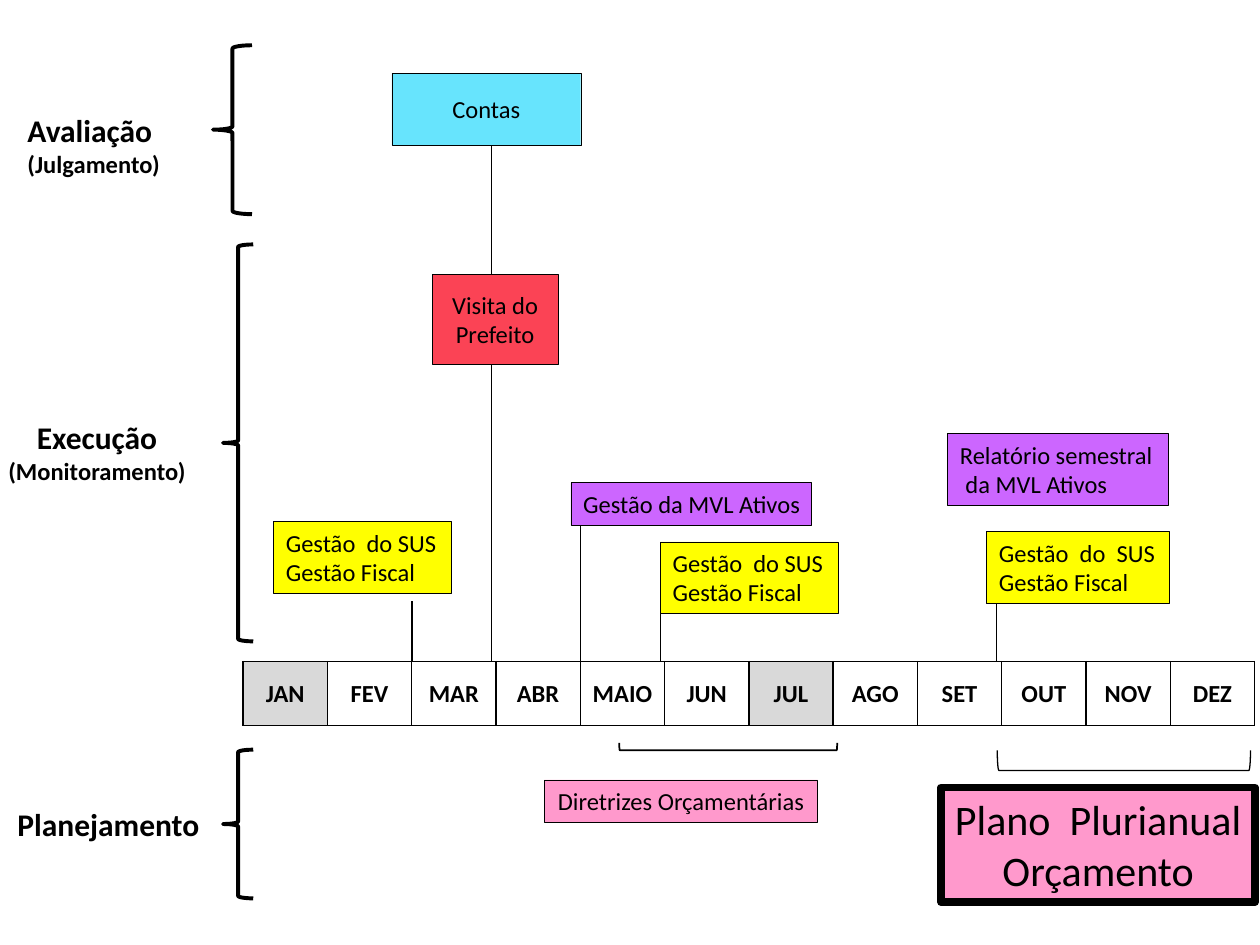
"""Build the yearly oversight calendar slide."""
from dataclasses import dataclass
from typing import Any

from lxml import etree
from pptx import Presentation, util as u
from pptx.dml.color import RGBColor
from pptx.enum import shapes as sh, text as tx
from pptx.oxml.ns import qn


@dataclass(frozen=True)
class Theme:
    font: str = "Calibri"
    ink: str = "000000"
    white: str = "FFFFFF"
    grey: str = "D9D9D9"
    cyan: str = "67E4FD"
    red: str = "FB4355"
    gold: str = "FFFF00"
    plum: str = "CC66FF"
    pink: str = "FF99CC"
    body: int = 14
    head: int = 18
    big: int = 24
    hair: float = 0.25
    thin: float = 0.75
    rule: float = 1
    bold: float = 2.25
    thick: float = 4.5


@dataclass(frozen=True)
class Area:
    left: float
    top: float
    wide: float
    high: float

    def emu(self) -> list[u.Inches]:
        return [u.Inches(v) for v in (self.left, self.top, self.wide, self.high)]


@dataclass(frozen=True)
class Phase:
    area: Area
    words: str
    brace: Area
    mid: bool = False


@dataclass(frozen=True)
class Event:
    area: Area
    words: str
    fill: str
    mid: bool = False
    wrap: bool = False
    size: int = 14
    line: float = 0.25


@dataclass(frozen=True)
class Stem:
    x: float
    low: float
    high: float
    line: float


@dataclass(frozen=True)
class Span:
    area: Area
    line: float


T = Theme()
MONTHS = "JAN FEV MAR ABR MAIO JUN JUL AGO SET OUT NOV DEZ".split()
RECESS = {"JAN", "JUL"}
GRID = Area(1.93, 5.25, 8.03, 0.51)
FISCAL = "Gestão  do SUS\nGestão Fiscal"

PHASES = [
    Phase(Area(0.12, 0.83, 1.26, 0.64), "Avaliação\n(Julgamento)",
          Area(1.69, 0.36, 0.31, 1.34)),
    Phase(Area(-0.04, 3.27, 1.62, 0.64), "Execução\n(Monitoramento)",
          Area(1.77, 1.94, 0.24, 3.15), mid=True),
    Phase(Area(0.04, 6.34, 1.66, 0.4), "Planejamento",
          Area(1.77, 5.95, 0.24, 1.18)),
]
STEMS = [
    Stem(3.9, 5.25, 1.15, T.hair),
    Stem(3.27, 5.25, 4.77, T.thin),
    Stem(7.91, 5.25, 4.77, T.thin),
    Stem(5.24, 5.25, 4.77, T.thin),
    Stem(4.61, 5.32, 4.14, T.thin),
]
EVENTS = [
    Event(Area(3.11, 0.58, 1.5, 0.57), "Contas", T.cyan, True, True),
    Event(Area(3.43, 2.18, 1, 0.71), "Visita do\nPrefeito", T.red, True, True),
    Event(Area(2.17, 4.14, 1.41, 0.57), FISCAL, T.gold),
    Event(Area(4.53, 3.83, 1.91, 0.34), "Gestão da MVL Ativos", T.plum),
    Event(Area(5.24, 4.3, 1.41, 0.57), FISCAL, T.gold),
    Event(Area(7.52, 3.44, 1.75, 0.57),
          "Relatório semestral\n da MVL Ativos", T.plum),
    Event(Area(7.83, 4.22, 1.45, 0.57), "Gestão  do  SUS\nGestão Fiscal", T.gold),
    Event(Area(4.32, 6.19, 2.17, 0.34), "Diretrizes Orçamentárias", T.pink, True),
    Event(Area(7.47, 6.25, 2.49, 0.91), "Plano  Plurianual\nOrçamento",
          T.pink, True, size=T.big, line=T.thick),
]
SPANS = [
    Span(Area(5.75, 5.06, 0.06, 1.73), T.rule),
    Span(Area(8.84, 5.03, 0.16, 2.01), T.thin),
]


def tint(fill: Any, hue: str) -> None:
    """Give a fill one plain colour."""
    fill.solid()
    fill.fore_color.rgb = RGBColor.from_string(hue)


def write(frame: Any, words: str, sizes: list[int], mid: bool,
          bold: bool = False) -> None:
    """Set the text; the last size serves all further paragraphs."""
    frame.text = words
    for n, para in enumerate(frame.paragraphs):
        para.alignment = tx.PP_ALIGN.CENTER if mid else tx.PP_ALIGN.LEFT
        for run in para.runs:
            font = run.font
            font.name, font.bold = T.font, bold
            font.size = u.Pt(sizes[min(n, len(sizes) - 1)])
            font.color.rgb = RGBColor.from_string(T.ink)


def shape(slide: Any, kind: Any, area: Area, line: float) -> Any:
    """Add an unfilled, outlined preset shape."""
    item = slide.shapes.add_shape(kind, *area.emu())
    item.shadow.inherit = False
    item.fill.background()
    tint(item.line.fill, T.ink)
    item.line.width = u.Pt(line)
    return item


def phase(slide: Any, part: Phase) -> None:
    """Add a phase title with its brace."""
    frame = slide.shapes.add_textbox(*part.area.emu()).text_frame
    frame.word_wrap = False
    write(frame, part.words, [T.head, T.body], part.mid, True)
    shape(slide, sh.MSO_SHAPE.LEFT_BRACE, part.brace, T.bold)


def event(slide: Any, part: Event) -> None:
    """Add a coloured event box."""
    item = shape(slide, sh.MSO_SHAPE.RECTANGLE, part.area, part.line)
    tint(item.fill, part.fill)
    frame = item.text_frame
    frame.word_wrap = part.wrap
    frame.vertical_anchor = (tx.MSO_ANCHOR.MIDDLE if part.wrap
                             else tx.MSO_ANCHOR.TOP)
    write(frame, part.words, [part.size], part.mid)


def stem(slide: Any, part: Stem) -> None:
    """Add an upright line from the calendar to an event."""
    x = u.Inches(part.x)
    item = slide.shapes.add_connector(
        sh.MSO_CONNECTOR.STRAIGHT, x, u.Inches(part.low), x, u.Inches(part.high))
    tint(item.line.fill, T.ink)
    item.line.width = u.Pt(part.line)
    etree.SubElement(item._element.spPr, qn("a:effectLst"))


def span(slide: Any, part: Span) -> None:
    """Add a bracket that lies under a run of months."""
    shape(slide, sh.MSO_SHAPE.LEFT_BRACKET, part.area, part.line).rotation = 270


def border(cell: Any) -> None:
    """Rule all four sides of a cell."""
    props = cell._tc.get_or_add_tcPr()
    for n, side in enumerate(("lnL", "lnR", "lnT", "lnB")):
        edge = etree.Element(qn(f"a:{side}"), w=str(u.Pt(T.rule)))
        fill = etree.SubElement(edge, qn("a:solidFill"))
        etree.SubElement(fill, qn("a:srgbClr"), val=T.ink)
        props.insert(n, edge)


def year(slide: Any) -> None:
    """Add the row of months."""
    table = slide.shapes.add_table(1, len(MONTHS), *GRID.emu()).table
    table.first_row = table.horz_banding = False
    for cell, month in zip(table.rows[0].cells, MONTHS):
        write(cell.text_frame, month, [T.body], True, True)
        cell.vertical_anchor = tx.MSO_ANCHOR.MIDDLE
        cell.margin_left = cell.margin_right = 0
        cell.margin_top = cell.margin_bottom = 0
        tint(cell.fill, T.grey if month in RECESS else T.white)
        border(cell)


def main() -> None:
    """Draw the slide and save it."""
    deck = Presentation()
    deck.slide_width, deck.slide_height = u.Inches(10), u.Inches(7.5)
    slide = deck.slides.add_slide(deck.slide_layouts[6])
    year(slide)
    for draw, parts in ((phase, PHASES), (stem, STEMS),
                        (event, EVENTS), (span, SPANS)):
        for part in parts:
            draw(slide, part)
    deck.save("out.pptx")


if __name__ == "__main__":
    main()
